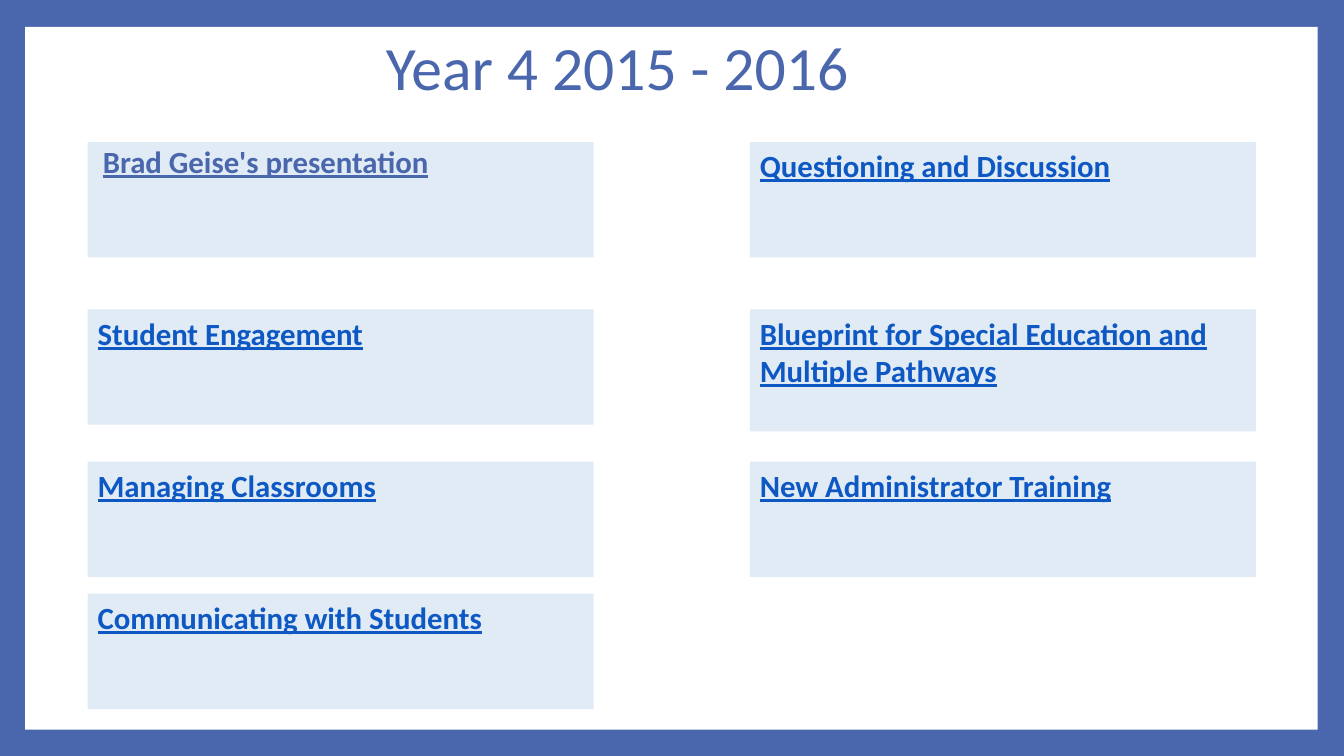
from dataclasses import dataclass

from pptx import Presentation
from pptx.dml.color import RGBColor
from pptx.enum import shapes, text
from pptx.util import Pt

FONT = "Calibri"
BLUE, LINK_BLUE, PALE_BLUE, WHITE = "4A66AC", "0E58C4", "E0EBF6", "FFFFFF"
LEFT, RIGHT = 62.64, 535.68
ROWS = (101.5, 221, 329.76, 424.08)
BOX_WIDTH, BOX_HEIGHT = 361.44, 82.4


@dataclass
class Topic:
    label: str
    left: float
    row: int
    height: float = BOX_HEIGHT
    color: str = LINK_BLUE
    indent: float = 7.2
    spacing: float = 1.0


TOPICS = (
    Topic("Brad Geise's presentation", LEFT, 0, color=BLUE, indent=10.8, spacing=0.9),
    Topic("Student Engagement", LEFT, 1),
    Topic("Managing Classrooms", LEFT, 2),
    Topic("Communicating with Students", LEFT, 3),
    Topic("Questioning and Discussion", RIGHT, 0),
    Topic("Blueprint for Special Education and Multiple Pathways", RIGHT, 1, height=87.12),
    Topic("New Administrator Training", RIGHT, 2),
)


def set_color(fmt, color: str) -> None:
    """Color a font, or a fill that is already solid."""
    target = fmt.color if hasattr(fmt, "color") else fmt.fore_color
    target.rgb = RGBColor.from_string(color)


def add_box(s, left: float, top: float, width: float, height: float, color: str):
    sp = s.shapes.add_shape(shapes.MSO_SHAPE.RECTANGLE, Pt(left), Pt(top), Pt(width), Pt(height))
    sp.shadow.inherit = False
    sp.line.fill.background()
    sp.fill.solid()
    set_color(sp.fill, color)
    return sp


def format_text(p, size: float, color: str, align, spacing: float, strong: bool) -> None:
    p.alignment = align
    p.line_spacing = spacing
    for r in p.runs:
        r.font.name = FONT
        r.font.size = Pt(size)
        r.font.bold = r.font.underline = strong
        set_color(r.font, color)


def add_title(s, label: str) -> None:
    sp = s.shapes.title
    sp.left, sp.top, sp.width, sp.height = Pt(10), Pt(0), Pt(862), Pt(101.5)
    tf = sp.text_frame
    tf.text = label
    tf.auto_size = text.MSO_AUTO_SIZE.NONE
    tf.vertical_anchor = text.MSO_ANCHOR.MIDDLE
    format_text(tf.paragraphs[0], 44, BLUE, text.PP_ALIGN.CENTER, 0.9, False)


def add_topic(s, topic: Topic) -> None:
    sp = add_box(s, topic.left, ROWS[topic.row], BOX_WIDTH, topic.height, PALE_BLUE)
    tf = sp.text_frame
    tf.text = topic.label
    tf.word_wrap = True
    tf.vertical_anchor = text.MSO_ANCHOR.TOP
    tf.margin_left = Pt(topic.indent)
    format_text(tf.paragraphs[0], 22, topic.color, text.PP_ALIGN.LEFT, topic.spacing, True)


def main() -> None:
    prs = Presentation()
    prs.slide_width, prs.slide_height = Pt(960), Pt(540)
    s = prs.slides.add_slide(prs.slide_layouts[5])
    s.background.fill.solid()
    set_color(s.background.fill, BLUE)

    panel = add_box(s, 18, 19.2, 923.2, 502, WHITE)
    s.shapes.title.element.addprevious(panel.element)  # keep the panel behind the title
    add_title(s, "Year 4 2015 - 2016")
    for topic in TOPICS:
        add_topic(s, topic)

    prs.save("out.pptx")


if __name__ == "__main__":
    main()
